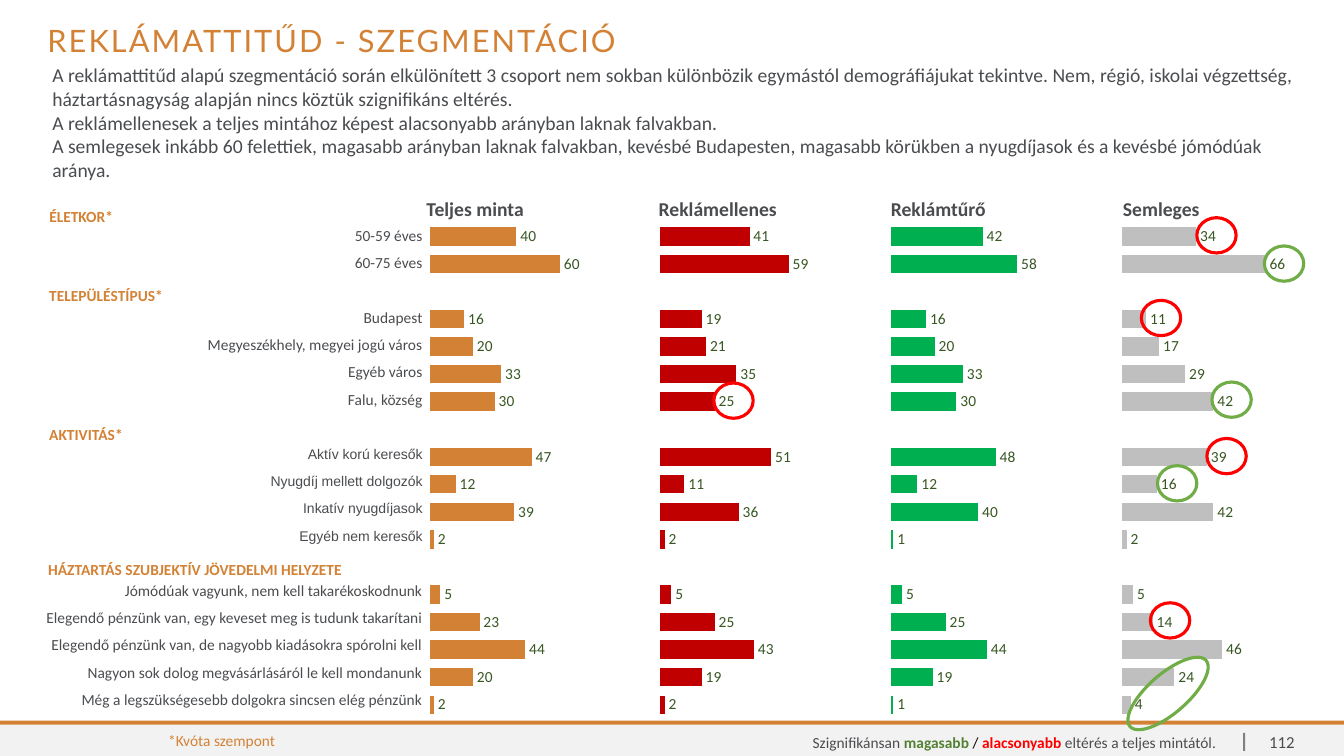
import pptx
import pptx.chart.data
import pptx.dml.color
import pptx.enum.chart
import pptx.enum.shapes
import pptx.enum.text
import pptx.oxml
import pptx.oxml.ns
import pptx.util
from lxml import etree

Inches, Pt = pptx.util.Inches, pptx.util.Pt
ALIGN, ANCHOR = pptx.enum.text.PP_ALIGN, pptx.enum.text.MSO_ANCHOR
SHAPE = pptx.enum.shapes.MSO_SHAPE
qn = pptx.oxml.ns.qn

ORANGE, GREY, RED, GREEN = "D38235", "4A4C4F", "FF0000", "70AD47"
TITLE = "REKLÁMATTITŰD - SZEGMENTÁCIÓ"
SUMMARY = [
    "A reklámattitűd alapú szegmentáció során elkülönített 3 csoport nem sokban különbözik egymástól "
    "demográfiájukat tekintve. Nem, régió, iskolai végzettség, háztartásnagyság alapján nincs köztük "
    "szignifikáns eltérés.",
    "A reklámellenesek a teljes mintához képest alacsonyabb arányban laknak falvakban.",
    "A semlegesek inkább 60 felettiek, magasabb arányban laknak falvakban, kevésbé Budapesten, "
    "magasabb körükben a nyugdíjasok és a kevésbé jómódúak aránya.",
]
# caption, left, top, width
GROUPS = [
    ("ÉLETKOR*", 0.39, 2.01, 0.95),
    ("TELEPÜLÉSTÍPUS*", 0.39, 2.79, 1.46),
    ("AKTIVITÁS*", 0.39, 4.17, 1.46),
    ("HÁZTARTÁS SZUBJEKTÍV JÖVEDELMI HELYZETE", 0.38, 5.51, 3.27),
]
ANSWERS = [
    "50-59 éves", "60-75 éves", "",
    "Budapest", "Megyeszékhely, megyei jogú város", "Egyéb város", "Falu, község", "",
    "Aktív korú keresők", "Nyugdíj mellett dolgozók", "Inkatív nyugdíjasok", "Egyéb nem keresők", "",
    "Jómódúak vagyunk, nem kell takarékoskodnunk",
    "Elegendő pénzünk van, egy keveset meg is tudunk takarítani",
    "Elegendő pénzünk van, de nagyobb kiadásokra spórolni kell",
    "Nagyon sok dolog megvásárlásáról le kell mondanunk",
    "Még a legszükségesebb dolgokra sincsen elég pénzünk",
]
ACTIVITY_ROWS = range(8, 12)
SEGMENTS = [
    ("Teljes minta", ORANGE,
     [40, 60, None, 16, 20, 33, 30, None, 47, 12, 39, 2, None, 5, 23, 44, 20, 2]),
    ("Reklámellenes", "C00000",
     [41, 59, None, 19, 21, 35, 25, None, 51, 11, 36, 2, None, 5, 25, 43, 19, 2]),
    ("Reklámtűrő", "00B050",
     [42, 58, None, 16, 20, 33, 30, None, 48, 12, 40, 1, None, 5, 25, 44, 19, 1]),
    ("Semleges", "BFBFBF",
     [34, 66, None, 11, 17, 29, 42, None, 39, 16, 42, 2, None, 5, 14, 46, 24, 4]),
]
PLOT_AREA = {"x": 0.004, "y": 0.149, "w": 0.842, "h": 0.844}
LEGEND = [
    ("Szignifikánsan ", GREY, False), ("magasabb ", "548235", True), ("/ ", "000000", False),
    ("alacsonyabb ", RED, True), ("eltérés a teljes mintától.", GREY, False),
]
# left, top, height, rotation, colour
MARKS = [
    (11.87, 2.16, 0.35, 0, RED), (12.54, 2.44, 0.35, 0, GREEN),
    (11.32, 2.98, 0.35, 0, RED), (12.02, 3.79, 0.35, 0, GREEN),
    (7.08, 3.8, 0.35, 0, RED), (11.97, 4.35, 0.35, 0, RED),
    (11.48, 4.62, 0.35, 0, GREEN), (11.41, 5.98, 0.35, 0, RED),
    (11.39, 6.38, 1, 49, GREEN),
]
# left, top, width, height, colour
FOOTER_BARS = [
    (0, 7.19, 13.33, 0.31, "F2F2F2"), (0, 7.15, 13.33, 0.04, ORANGE),
    (12.33, 7.27, 0.02, 0.18, "808080"),
]


def rgb(code):
    return pptx.dml.color.RGBColor.from_string(code)


def style(font, size, color, bold=False, name="Calibri"):
    font.size, font.bold, font.name = Pt(size), bold, name
    font.color.rgb = rgb(color)


def box(left, top, width, height):
    return [Inches(v) for v in (left, top, width, height)]


def add_text(place, runs, size, anchor=ANCHOR.TOP, align=ALIGN.LEFT):
    """Add a one-paragraph text box; runs are (text, colour, bold)."""
    frame = slide.shapes.add_textbox(*box(*place)).text_frame
    frame.word_wrap = True
    frame.vertical_anchor = anchor
    paragraph = frame.paragraphs[0]
    paragraph.alignment = align
    for text, color, bold in runs:
        run = paragraph.add_run()
        run.text = text
        style(run.font, size, color, bold)


def add_plain_shape(kind, place):
    shape = slide.shapes.add_shape(kind, *box(*place))
    shape.shadow.inherit = False
    return shape


def add_plain_table(place, rows):
    """Add an unfilled table; a cell is (text, size, font, bold, alignment)."""
    table = slide.shapes.add_table(len(rows), len(rows[0]), *box(*place)).table
    table.first_row = table.horz_banding = False
    for r, row in enumerate(rows):
        for c, (text, size, name, bold, align) in enumerate(row):
            cell = table.cell(r, c)
            cell.fill.background()
            cell.vertical_anchor = ANCHOR.MIDDLE
            cell.margin_left = cell.margin_top = cell.margin_right = Inches(0.01)
            cell.margin_bottom = 0
            paragraph = cell.text_frame.paragraphs[0]
            if text:
                paragraph.text = text
                paragraph.alignment = align
                style(paragraph.runs[0].font, size, GREY, bold, name)
            else:
                etree.SubElement(paragraph._p, qn("a:endParaRPr"), sz=str(size * 100))


def add_segment_chart(place, name, color, values):
    data = pptx.chart.data.CategoryChartData(number_format="0")
    data.categories = [str(n + 1) for n in range(len(values))]
    data.add_series(name, values)
    kind = pptx.enum.chart.XL_CHART_TYPE.BAR_CLUSTERED
    chart = slide.shapes.add_chart(kind, *box(*place), data).chart
    chart.has_title = chart.has_legend = False
    style(chart.font, 12, GREY)
    chart.category_axis.reverse_order = True
    chart.value_axis.minimum_scale, chart.value_axis.maximum_scale = 0, 100
    chart.value_axis.has_major_gridlines = False
    chart.category_axis.visible = chart.value_axis.visible = False
    plot = chart.plots[0]
    plot.gap_width = 50
    plot.vary_by_categories = False
    fill = plot.series[0].format.fill
    fill.solid()
    fill.fore_color.rgb = rgb(color)
    plot.has_data_labels = True
    labels = plot.data_labels
    labels.show_value = True
    labels.number_format, labels.number_format_is_linked = "0", False
    labels.position = pptx.enum.chart.XL_LABEL_POSITION.OUTSIDE_END
    style(labels.font, 11, "385723")

    plot_area = chart._chartSpace.chart.plotArea
    for old in plot_area.findall(qn("c:layout")):
        plot_area.remove(old)
    layout = etree.Element(qn("c:layout"))
    plot_area.insert(0, layout)
    manual = etree.SubElement(layout, qn("c:manualLayout"))
    settings = [("layoutTarget", "inner"), ("xMode", "edge"), ("yMode", "edge")]
    for tag, value in settings + list(PLOT_AREA.items()):
        etree.SubElement(manual, qn("c:" + tag), val=str(value))


presentation = pptx.Presentation()
presentation.slide_width, presentation.slide_height = Inches(13.33), Inches(7.5)
slide = presentation.slides.add_slide(presentation.slide_layouts[5])

for *place, color in FOOTER_BARS:
    bar = add_plain_shape(SHAPE.RECTANGLE, place)
    bar.fill.solid()
    bar.fill.fore_color.rgb = rgb(color)
    bar.line.fill.background()

title = slide.shapes.title
title.left, title.top, title.width, title.height = box(0.37, 0.21, 12.6, 0.46)
title.text_frame.text = TITLE
title.text_frame.auto_size = pptx.enum.text.MSO_AUTO_SIZE.NONE
title.text_frame.vertical_anchor = ANCHOR.TOP
heading = title.text_frame.paragraphs[0]
heading.alignment, heading.line_spacing = ALIGN.LEFT, 0.9
style(heading.runs[0].font, 22, ORANGE, name="Lato")
heading.runs[0].font._element.set("spc", "150")

summary = slide.shapes.add_textbox(*box(0.42, 0.58, 12.55, 1.23)).text_frame
summary.word_wrap = True
summary.text = "\n".join(SUMMARY)
for paragraph in summary.paragraphs:
    style(paragraph.runs[0].font, 14, GREY)

answer_rows = []
for index, answer in enumerate(ANSWERS):
    size, font = (10, "Arial") if index in ACTIVITY_ROWS else (11, "Calibri")
    answer_rows.append([(answer, size, font, False, ALIGN.RIGHT)])
add_plain_table((0.37, 2.2, 3.83, 4.88), answer_rows)
for caption, left, top, width in GROUPS:
    add_text((left, top, width, 0.29), [(caption, ORANGE, True)], 11)

for index, segment in enumerate(SEGMENTS):
    add_segment_chart((4.25 + 2.29 * index, 1.34, 2.56, 5.83), *segment)
add_plain_table((4.22, 1.91, 9.21, 0.33),
                [[(name, 14, "Calibri", True, ALIGN.LEFT) for name, _, _ in SEGMENTS]])

add_text((1.57, 7.21, 3.12, 0.27), [("*Kvóta szempont", ORANGE, False)], 11, ANCHOR.MIDDLE)
add_text((4.54, 7.27, 7.62, 0.18), LEGEND, 11, ANCHOR.MIDDLE, ALIGN.RIGHT)
add_text((12.49, 7.27, 0.47, 0.18), [("112", GREY, False)], 12, ANCHOR.MIDDLE)

for left, top, height, rotation, color in MARKS:
    mark = add_plain_shape(SHAPE.OVAL, (left, top, 0.39, height))
    mark.rotation = rotation
    mark.fill.background()
    mark.line.color.rgb = rgb(color)
    mark.line.width = Pt(2.25)

presentation.save("out.pptx")
